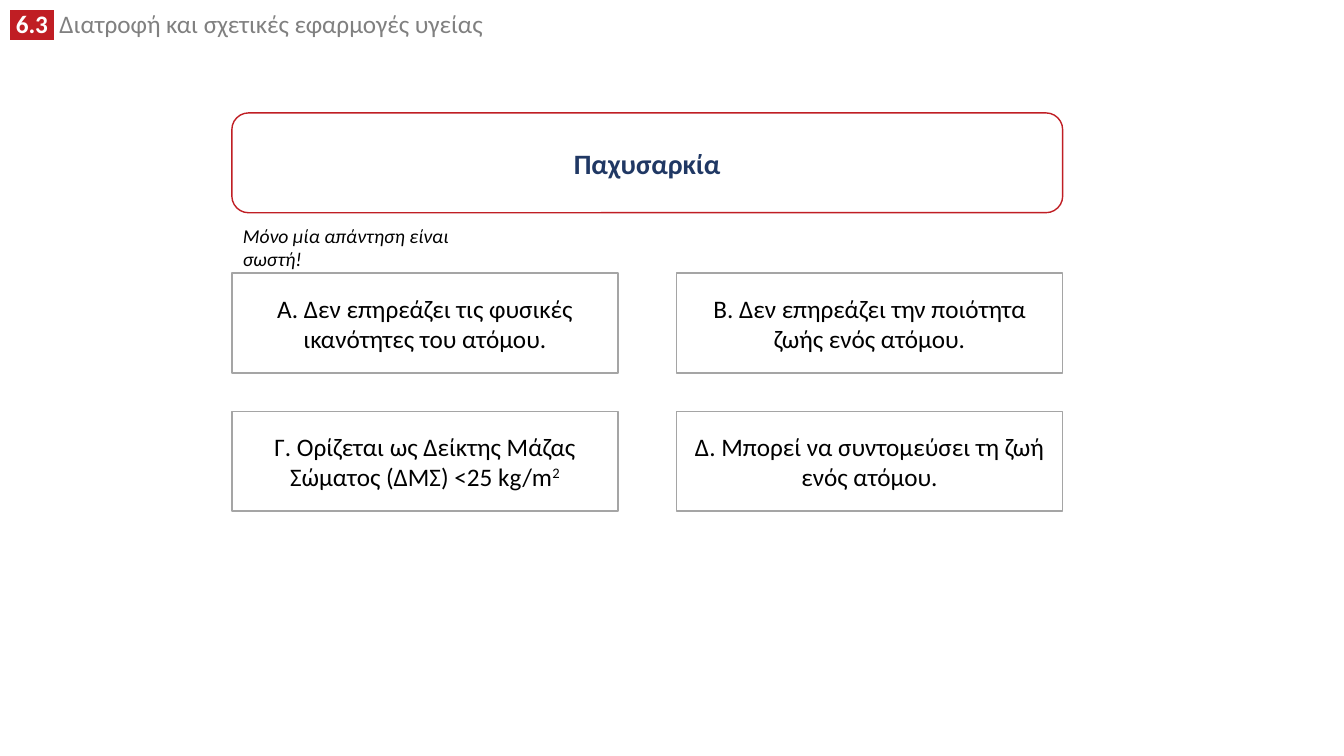
from lxml import etree
from pptx import Presentation
from pptx.dml.color import RGBColor
from pptx.enum import shapes, text
from pptx.oxml import ns
from pptx.util import Inches, Pt

RED = RGBColor(0xC0, 0x1E, 0x24)
NAVY = RGBColor(0x20, 0x38, 0x64)
GREY = RGBColor(0x80, 0x80, 0x80)
BORDER = RGBColor(0xA5, 0xA5, 0xA5)
WHITE = RGBColor(0xFF, 0xFF, 0xFF)
BLACK = RGBColor(0, 0, 0)
FONT = "Calibri"

LEFT, TOP = 2.3, 2.71
ANSWER_WIDTH, BOX_HEIGHT = 3.83, 0.99
COLUMN_STEP, ROW_STEP = 4.41, 1.37
ANSWERS = [
    ("A. Δεν επηρεάζει τις φυσικές ικανότητες του ατόμου.", ""),
    ("B. Δεν επηρεάζει την ποιότητα ζωής ενός ατόμου.", ""),
    ("Γ. Ορίζεται ως Δείκτης Μάζας Σώματος (ΔΜΣ) <25 kg/m", "2"),
    ("Δ. Μπορεί να συντομεύσει τη ζωή ενός ατόμου.", ""),
]


def set_font(font, size, color, bold=False, italic=False):
    font.name = FONT
    font.size = Pt(size)
    font.color.rgb = color
    font.bold = bold
    font.italic = italic


def highlight(run, color):
    mark = etree.Element(ns.qn("a:highlight"))
    etree.SubElement(mark, ns.qn("a:srgbClr"), val=str(color))
    run._r.get_or_add_rPr().find(ns.qn("a:solidFill")).addnext(mark)


def add_heading(slide, number, topic):
    heading = slide.shapes.title
    heading.left, heading.top = Inches(0), Inches(0.09)
    heading.width, heading.height = Inches(9.52), Inches(0.35)
    frame = heading.text_frame
    frame.auto_size = text.MSO_AUTO_SIZE.NONE
    frame.vertical_anchor = text.MSO_ANCHOR.TOP
    paragraph = frame.paragraphs[0]
    paragraph.alignment = text.PP_ALIGN.LEFT
    paragraph.line_spacing = 0.8
    number_run = paragraph.add_run()
    number_run.text = f" {number} "
    set_font(number_run.font, 18, WHITE, bold=True)
    highlight(number_run, RED)
    topic_run = paragraph.add_run()
    topic_run.text = f" {topic}"
    set_font(topic_run.font, 18, GREY)


def add_box(slide, kind, left, top, width, border, wording, size, color,
            bold=False, superscript=""):
    box = slide.shapes.add_shape(
        kind, Inches(left), Inches(top), Inches(width), Inches(BOX_HEIGHT))
    box.shadow.inherit = False
    box.fill.solid()
    box.fill.fore_color.rgb = WHITE
    box.line.color.rgb = border
    box.line.width = Pt(1)
    frame = box.text_frame
    frame.word_wrap = True
    frame.vertical_anchor = text.MSO_ANCHOR.MIDDLE
    paragraph = frame.paragraphs[0]
    paragraph.alignment = text.PP_ALIGN.CENTER
    set_font(paragraph.font, size, color, bold)
    paragraph.add_run().text = wording
    if superscript:
        raised = paragraph.add_run()
        raised.text = superscript
        raised._r.get_or_add_rPr().set("baseline", "30000")


def add_hint(slide, wording):
    hint = slide.shapes.add_textbox(
        Inches(2.31), Inches(2.17), Inches(2.36), Inches(0.34))
    hint.text_frame.word_wrap = True
    paragraph = hint.text_frame.paragraphs[0]
    set_font(paragraph.font, 14, BLACK, italic=True)
    paragraph.add_run().text = wording


def main():
    deck = Presentation()
    deck.slide_width, deck.slide_height = Inches(13.33), Inches(7.5)
    slide = deck.slides.add_slide(deck.slide_layouts[5])
    add_heading(slide, "6.3", "Διατροφή και σχετικές εφαρμογές υγείας")
    add_box(slide, shapes.MSO_SHAPE.ROUNDED_RECTANGLE, LEFT, 1.12,
            COLUMN_STEP + ANSWER_WIDTH, RED, "Παχυσαρκία", 20, NAVY, bold=True)
    for index, (answer, superscript) in enumerate(ANSWERS):
        row, column = divmod(index, 2)
        add_box(slide, shapes.MSO_SHAPE.RECTANGLE,
                LEFT + column * COLUMN_STEP, TOP + row * ROW_STEP,
                ANSWER_WIDTH, BORDER, answer, 18, BLACK,
                superscript=superscript)
    add_hint(slide, "Μόνο μία απάντηση είναι σωστή!")
    deck.save("out.pptx")


if __name__ == "__main__":
    main()
